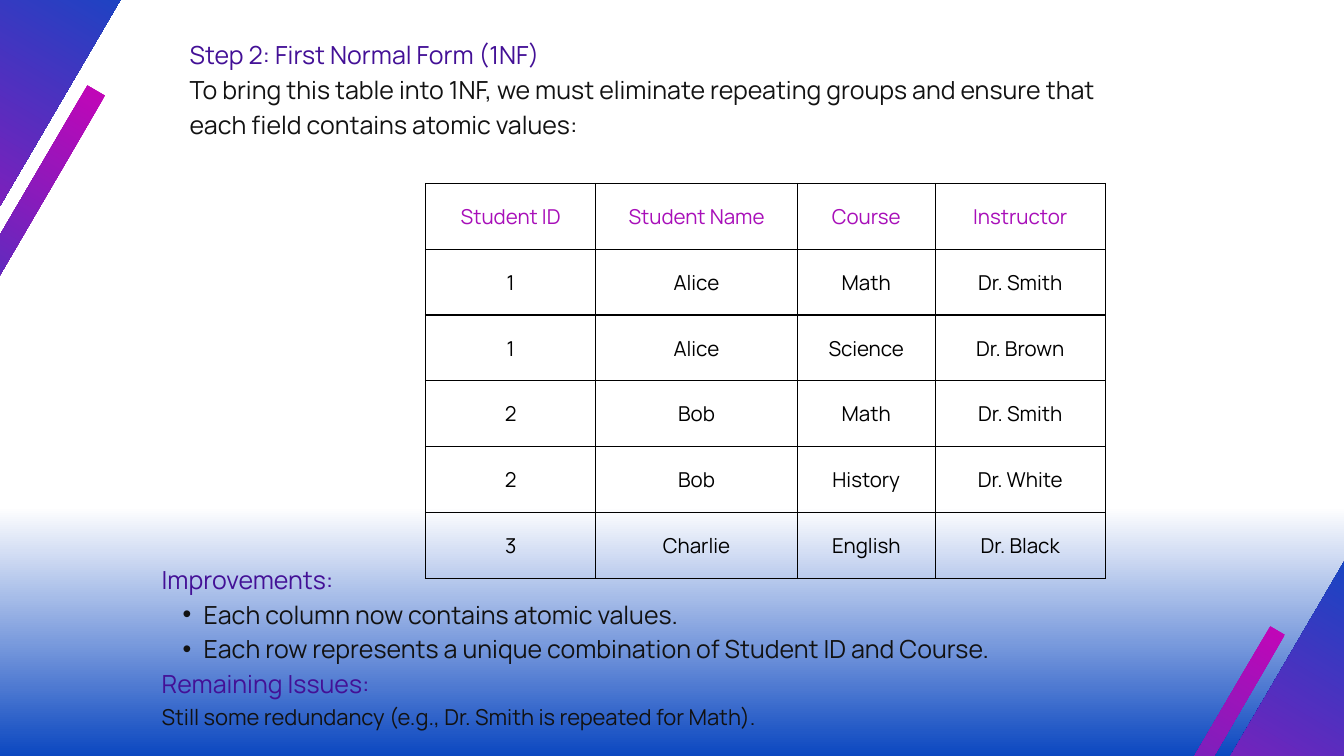
import dataclasses

import pptx
import pptx.dml.color
import pptx.enum.shapes
import pptx.enum.text
import pptx.oxml
import pptx.oxml.ns
import pptx.oxml.xmlchemy
import pptx.util

PX = 9525
SLIDE_BOX = (0, 0, 1920, 1080)
ALIGN = pptx.enum.text.PP_ALIGN
ANCHOR = pptx.enum.text.MSO_ANCHOR


@dataclasses.dataclass(frozen=True)
class Theme:
    """Colours, font and type sizes of the slide."""

    font: str = "Manrope"
    heading: str = "431096"
    body: str = "121212"
    table_header: str = "A80FB9"
    table_text: str = "000000"
    background: tuple = ((0, "FFFFFF"), (67, "FFFFFF"), (100, "0B47C0"))
    band: tuple = ((0, "51048D"), (50, "054CC4"), (100, "C405B7"))
    bar: tuple = ((0, "C405B7"), (50, "054CC4"), (100, "51048D"))
    text_size: float = 26.7
    text_spacing: float = 37.4
    note_size: float = 23.5
    note_spacing: float = 32.9
    table_size: float = 22
    table_spacing: float = 30.8
    border_width: float = 1.5


THEME = Theme()

INTRO = (
    "To bring this table into 1NF, we must eliminate repeating groups and ensure that",
    "each field contains atomic values:",
)
TABLE_ROWS = (
    ("Student ID", "Student Name", "Course", "Instructor"),
    ("1", "Alice", "Math", "Dr. Smith"),
    ("1", "Alice", "Science", "Dr. Brown"),
    ("2", "Bob", "Math", "Dr. Smith"),
    ("2", "Bob", "History", "Dr. White"),
    ("3", "Charlie", "English", "Dr. Black"),
)
COLUMN_WIDTHS = (243, 288, 197, 243)
ROW_HEIGHT = 94
IMPROVEMENTS = (
    "Each column now contains atomic values.",
    "Each row represents a unique combination of Student ID and Course.",
)


def px(*lengths):
    """Turn pixel lengths into EMU."""
    return [pptx.util.Emu(length * PX) for length in lengths]


def add_element(parent, tag, **attributes):
    """Append a DrawingML element and return it."""
    element = pptx.oxml.xmlchemy.OxmlElement(tag)
    for name, value in attributes.items():
        element.set(name, str(value))
    parent.append(element)
    return element


def paint_gradient(fill, owner, stops):
    """Give a fill a top-to-bottom gradient with the given stops."""
    fill.gradient()
    fill.gradient_angle = 270
    stop_list = owner.find(".//" + pptx.oxml.ns.qn("a:gsLst"))
    for stop in list(stop_list):
        stop_list.remove(stop)
    for position, color in stops:
        stop = add_element(stop_list, "a:gs", pos=position * 1000)
        add_element(stop, "a:srgbClr", val=color)


def write_paragraph(paragraph, text, color, size=THEME.text_size,
                    spacing=THEME.text_spacing, alignment=ALIGN.LEFT):
    """Write one formatted run into a paragraph."""
    paragraph.alignment = alignment
    paragraph.line_spacing = pptx.util.Pt(spacing)
    paragraph.space_before = paragraph.space_after = pptx.util.Pt(0)
    run = paragraph.add_run()
    run.text = text
    run.font.name = THEME.font
    run.font.size = pptx.util.Pt(size)
    run.font.color.rgb = pptx.dml.color.RGBColor.from_string(color)


def add_bullet(paragraph):
    """Indent a paragraph and give it a round bullet."""
    paragraph.level = 1
    properties = paragraph._p.get_or_add_pPr()
    left, indent = px(60, -30)
    properties.set("marL", str(left))
    properties.set("indent", str(indent))
    add_element(properties, "a:buFont", typeface="Arial")
    add_element(properties, "a:buChar", char="•")


def prepare_frame(frame):
    """Make a text frame wrap, without margins, from the top."""
    frame.word_wrap = True
    frame.auto_size = pptx.enum.text.MSO_AUTO_SIZE.NONE
    frame.vertical_anchor = ANCHOR.TOP
    frame.margin_left = frame.margin_right = frame.margin_top = frame.margin_bottom = 0


def add_text(slide, box, lines):
    """Add a text box of (text, is bullet, format) lines."""
    frame = slide.shapes.add_textbox(*px(*box)).text_frame
    prepare_frame(frame)
    for index, (text, is_bullet, style) in enumerate(lines):
        paragraph = frame.add_paragraph() if index else frame.paragraphs[0]
        write_paragraph(paragraph, text, **style)
        if is_bullet:
            add_bullet(paragraph)


def add_stripe(slide, box, stops):
    """Add one slanted gradient stripe."""
    shape = slide.shapes.add_shape(pptx.enum.shapes.MSO_SHAPE.RECTANGLE, *px(*box))
    shape.rotation = 30.3
    shape.shadow.inherit = False
    shape.line.fill.background()
    paint_gradient(shape.fill, shape._element.spPr, stops)


def add_corners(slide, box):
    """Add a band and a bar across the top left and bottom right corners."""
    left, top, width, height = box
    right, bottom = left + width, top + height
    add_stripe(slide, (left - 94, top - 711, 335, 1095), THEME.band)
    add_stripe(slide, (left - 170, top + 50, 29, 1161), THEME.bar)
    add_stripe(slide, (right + 12, bottom - 775, 335, 1045), THEME.band)
    add_stripe(slide, (right - 394, bottom - 257, 24, 1138), THEME.bar)


def add_heading(slide, box):
    """Place the title with the introduction below it."""
    left, top, width, height = box
    title_height = 50
    title = slide.shapes.title
    title.left, title.top, title.width, title.height = px(left, top, width, title_height)
    prepare_frame(title.text_frame)
    write_paragraph(title.text_frame.paragraphs[0], "Step 2: First Normal Form (1NF)",
                    THEME.heading)
    add_text(slide, (left, top + title_height, width, height - title_height),
             [(line, False, {"color": THEME.body}) for line in INTRO])


def add_borders(cell):
    """Draw a solid border on all sides of a cell."""
    properties = cell._tc.get_or_add_tcPr()
    for index, side in enumerate(("a:lnL", "a:lnR", "a:lnT", "a:lnB")):
        line = pptx.oxml.xmlchemy.OxmlElement(side)
        line.set("w", str(pptx.util.Pt(THEME.border_width)))
        add_element(add_element(line, "a:solidFill"), "a:srgbClr", val=THEME.table_text)
        properties.insert(index, line)


def add_student_table(slide, left, top):
    """Add the enrolment table at the given corner."""
    size = (sum(COLUMN_WIDTHS), ROW_HEIGHT * len(TABLE_ROWS))
    table = slide.shapes.add_table(len(TABLE_ROWS), len(COLUMN_WIDTHS),
                                   *px(left, top, *size)).table
    table.first_row = table.horz_banding = False
    for column, width in zip(table.columns, px(*COLUMN_WIDTHS)):
        column.width = width
    for row_index, row in enumerate(TABLE_ROWS):
        color = THEME.table_text if row_index else THEME.table_header
        for column_index, text in enumerate(row):
            cell = table.cell(row_index, column_index)
            cell.fill.background()
            cell.vertical_anchor = ANCHOR.MIDDLE
            cell.margin_left, cell.margin_right, cell.margin_top, cell.margin_bottom = px(
                17, 17, 17, 17)
            write_paragraph(cell.text_frame.paragraphs[0], text, color, THEME.table_size,
                            THEME.table_spacing, ALIGN.CENTER)
            add_borders(cell)


def add_findings(slide, box):
    """Add the improvements and the remaining issues."""
    heading, body = {"color": THEME.heading}, {"color": THEME.body}
    note = {**body, "size": THEME.note_size, "spacing": THEME.note_spacing}
    add_text(slide, box, [
        ("Improvements:", False, heading),
        *((line, True, body) for line in IMPROVEMENTS),
        ("Remaining Issues:", False, heading),
        ("Still some redundancy (e.g., Dr. Smith is repeated for Math).", False, note),
    ])


def main():
    """Build and save the presentation."""
    presentation = pptx.Presentation()
    presentation.slide_width, presentation.slide_height = px(*SLIDE_BOX[2:])
    slide = presentation.slides.add_slide(presentation.slide_layouts[5])
    paint_gradient(slide.background.fill, slide._element, THEME.background)
    add_corners(slide, SLIDE_BOX)
    add_heading(slide, (271, 50, 1379, 242))
    add_student_table(slide, 608, 262)
    add_findings(slide, (231, 799, 1379, 239))
    presentation.save("out.pptx")


if __name__ == "__main__":
    main()
